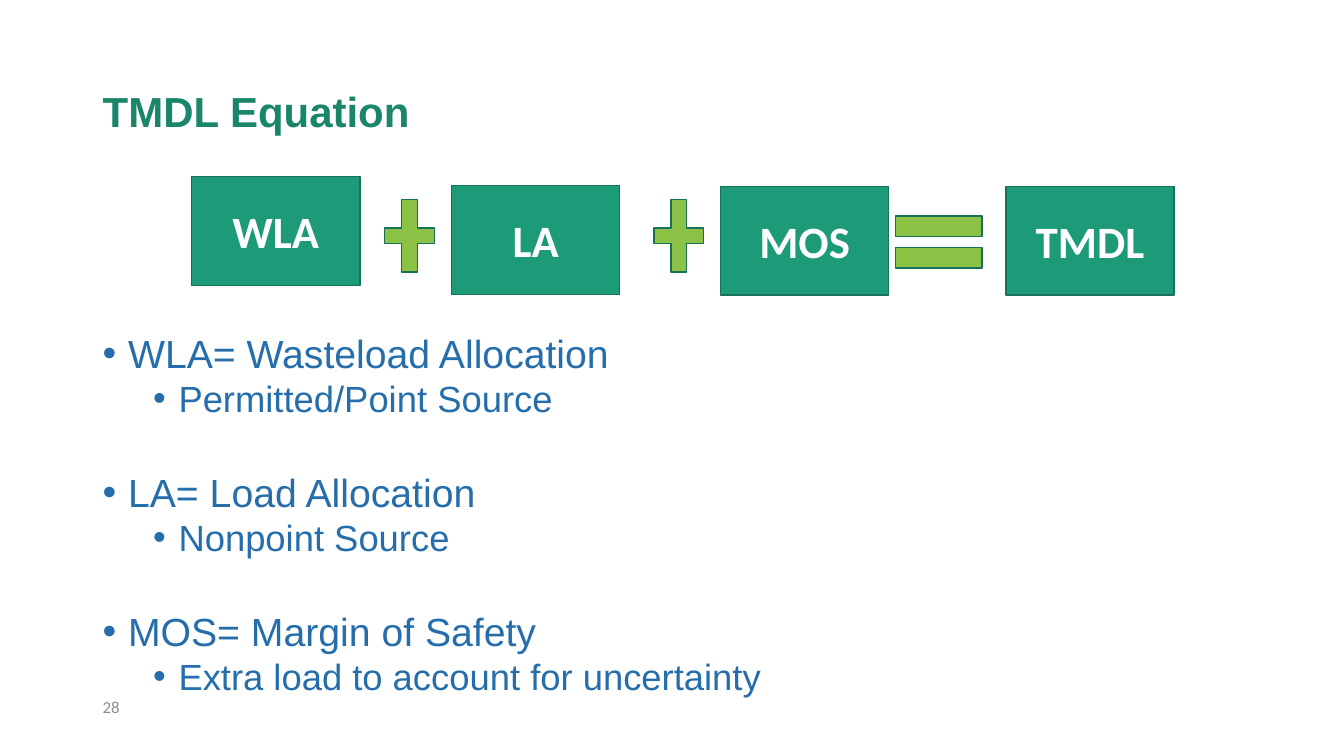
from lxml import etree
from pptx import Presentation
from pptx.dml.color import RGBColor
from pptx.enum.shapes import MSO_SHAPE
from pptx.enum.text import MSO_ANCHOR, PP_ALIGN
from pptx.oxml.ns import qn
from pptx.util import Cm, Pt

RECTANGLE = MSO_SHAPE.RECTANGLE
PLUS = MSO_SHAPE.MATH_PLUS
EQUALS = MSO_SHAPE.MATH_EQUAL
TOP = MSO_ANCHOR.TOP
MIDDLE = MSO_ANCHOR.MIDDLE
LEFT = PP_ALIGN.LEFT
CENTER = PP_ALIGN.CENTER

TITLE_GREEN = RGBColor(0x19, 0x85, 0x69)
BOX_GREEN = RGBColor(0x1D, 0x9A, 0x78)
OUTLINE_GREEN = RGBColor(0x15, 0x72, 0x59)
OPERATOR_GREEN = RGBColor(0x8B, 0xC1, 0x45)
BODY_BLUE = RGBColor(0x25, 0x6E, 0xAB)
NUMBER_GRAY = RGBColor(0x8C, 0x8C, 0x8C)
WHITE = RGBColor(0xFF, 0xFF, 0xFF)

MARGIN_LEFT = 2.34
CONTENT_WIDTH = 29.21

# Sizes and positions in cm; left and top are relative to the equation's corner
TERM_SIZE = (4.24, 2.74)
PLUS_SIZE = (1.7, 2.49)
EQUALS_SIZE = (2.97, 2.24)
TERMS = [("WLA", 0, 0), ("LA", 6.55, 0.23), ("MOS", 13.33, 0.25), ("TMDL", 20.52, 0.25)]
OPERATORS = [
    (PLUS, 4.64, 0.25, PLUS_SIZE),
    (PLUS, 11.43, 0.25, PLUS_SIZE),
    (EQUALS, 17.34, 0.53, EQUALS_SIZE),
]

DEFINITIONS = [
    ("WLA= Wasteload Allocation", "Permitted/Point Source"),
    ("LA= Load Allocation", "Nonpoint Source"),
    ("MOS= Margin of Safety", "Extra load to account for uncertainty"),
]


def add_bullet(paragraph, indent):
    """Hang a round bullet to the left of the given text indent in cm."""
    properties = paragraph._p.get_or_add_pPr()
    properties.set("marL", str(Cm(indent)))
    properties.set("indent", str(-Cm(0.64)))
    font = etree.SubElement(properties, qn("a:buFont"))
    font.set("typeface", "Arial")
    etree.SubElement(properties, qn("a:buChar")).set("char", "•")


def write(paragraph, text, *, size, color, font="Arial", bold=False,
          align=LEFT, line_spacing=1.0, space_before=0, bullet_indent=None):
    if bullet_indent is not None:
        add_bullet(paragraph, bullet_indent)
    paragraph.alignment = align
    paragraph.line_spacing = line_spacing
    paragraph.space_before = Pt(space_before)
    run = paragraph.add_run()
    run.text = text
    run.font.name = font
    run.font.size = Pt(size)
    run.font.bold = bold
    run.font.color.rgb = color


def add_text_frame(slide, left, top, width, height, anchor):
    box = slide.shapes.add_textbox(Cm(left), Cm(top), Cm(width), Cm(height))
    frame = box.text_frame
    frame.word_wrap = True
    frame.vertical_anchor = anchor
    return frame


def add_outlined_shape(shapes, kind, left, top, size, fill):
    width, height = size
    shape = shapes.add_shape(kind, Cm(left), Cm(top), Cm(width), Cm(height))
    shape.shadow.inherit = False
    shape.fill.solid()
    shape.fill.fore_color.rgb = fill
    shape.line.color.rgb = OUTLINE_GREEN
    shape.line.width = Pt(1)
    return shape


def add_title(slide, left, top, width, height):
    frame = add_text_frame(slide, left, top, width, height, MIDDLE)
    write(frame.paragraphs[0], "TMDL Equation", size=30, color=TITLE_GREEN,
          bold=True, line_spacing=0.9)


def add_equation(slide, left, top):
    shapes = slide.shapes.add_group_shape().shapes
    for label, offset_x, offset_y in TERMS:
        term = add_outlined_shape(shapes, RECTANGLE, left + offset_x,
                                  top + offset_y, TERM_SIZE, BOX_GREEN)
        term.text_frame.vertical_anchor = MIDDLE
        write(term.text_frame.paragraphs[0], label, size=32, color=WHITE,
              font="Calibri", bold=True, align=CENTER)
    for kind, offset_x, offset_y, size in OPERATORS:
        add_outlined_shape(shapes, kind, left + offset_x, top + offset_y,
                           size, OPERATOR_GREEN)


def add_definitions(slide, left, top, width, height):
    frame = add_text_frame(slide, left, top, width, height, TOP)
    for index, (definition, detail) in enumerate(DEFINITIONS):
        paragraph = frame.add_paragraph() if index else frame.paragraphs[0]
        write(paragraph, definition, size=28, color=BODY_BLUE, line_spacing=0.84,
              space_before=40 if index else 0, bullet_indent=0.64)
        paragraph = frame.add_paragraph()
        paragraph.level = 1
        write(paragraph, detail, size=26, color=BODY_BLUE, line_spacing=0.84,
              space_before=5, bullet_indent=1.91)


def add_slide_number(slide, left, top, width, height):
    frame = add_text_frame(slide, left, top, width, height, MIDDLE)
    write(frame.paragraphs[0], "28", size=12, color=NUMBER_GRAY, font="Calibri")


def main():
    presentation = Presentation()
    presentation.slide_width = Cm(33.87)
    presentation.slide_height = Cm(19.05)
    slide = presentation.slides.add_slide(presentation.slide_layouts[6])
    add_title(slide, MARGIN_LEFT, 1.02, CONTENT_WIDTH, 3.68)
    add_definitions(slide, MARGIN_LEFT, 8.36, CONTENT_WIDTH, 9.45)
    add_slide_number(slide, MARGIN_LEFT, 17.4, CONTENT_WIDTH, 0.8)
    add_equation(slide, 4.83, 4.45)
    presentation.save("out.pptx")


if __name__ == "__main__":
    main()
